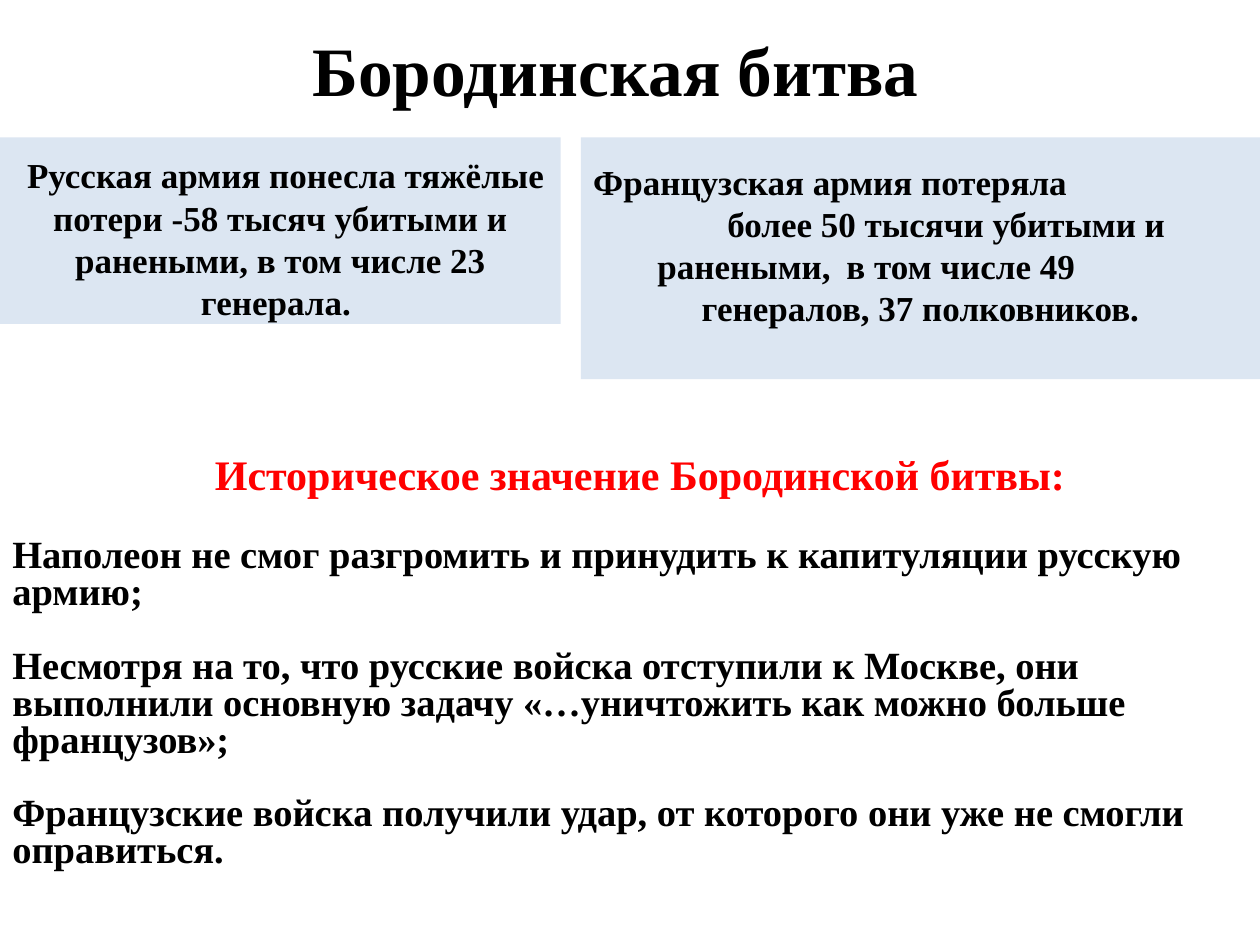
from lxml import etree
from pptx import Presentation
from pptx.dml.color import RGBColor
from pptx.enum.shapes import MSO_SHAPE
from pptx.enum.text import MSO_ANCHOR, PP_ALIGN
from pptx.oxml.ns import qn
from pptx.util import Inches, Pt

LEFT, CENTER = PP_ALIGN.LEFT, PP_ALIGN.CENTER
TOP, MIDDLE = MSO_ANCHOR.TOP, MSO_ANCHOR.MIDDLE
RECTANGLE = MSO_SHAPE.RECTANGLE
FONT = "Times New Roman"
BLACK, RED, PANEL_BLUE = "000000", "FF0000", "DCE6F2"

# Each paragraph: runs of (text, size), then its format.
TITLE = [([("Бородинская битва", 39.6)], {})]
RUSSIAN_LOSSES = [
    ([(" ", 24), ("Русская армия понесла тяжёлые потери -58 тысяч убитыми и "
                  "ранеными, в том числе 23 генерала. ", 20)], {}),
]
FRENCH_LOSSES = [
    ([("Французская армия потеряла", 20)], {"alignment": LEFT}),
    ([("более 50 тысячи убитыми и", 20)], {"indent": 0.41}),
    ([("ранеными,\tв том числе 49", 20)],
     {"alignment": LEFT, "indent": 0.51, "tab": 2.86}),
    ([("генералов, 37 полковников.", 20)], {}),
]
HEADING = "Историческое значение Бородинской битвы:"
CONCLUSIONS = [
    "Наполеон не смог разгромить и принудить к капитуляции русскую армию;",
    "Несмотря на то, что русские войска отступили к Москве, они выполнили "
    "основную задачу «…уничтожить как можно больше французов»;",
    "Французские войска получили удар, от которого они уже не смогли оправиться.",
]
SIGNIFICANCE = [([(HEADING, 24)], {"color": RED, "line_spacing": 0.8})] + [
    ([(text, 22)], {"alignment": LEFT, "line_spacing": 0.8,
                    "space_before": Pt(21 if number else 23)})
    for number, text in enumerate(CONCLUSIONS)
]

# Each block: left, top, width, height; fill; anchor; top margin; paragraphs.
BLOCKS = [
    ((2.19, 0, 5.39, 1.09), None, MIDDLE, 0.05, TITLE),
    ((0, 1.09, 4.45, 1.48), PANEL_BLUE, TOP, 0.07, RUSSIAN_LOSSES),
    ((4.61, 1.09, 5.39, 1.92), PANEL_BLUE, TOP, 0.18, FRENCH_LOSSES),
    ((0, 3.59, 10.16, 3.41), None, TOP, 0.05, SIGNIFICANCE),
]


def rgb(value):
    return RGBColor.from_string(value)


def set_indent(paragraph, indent, tab):
    """Set the left margin and an optional tab stop, in inches."""
    properties = paragraph._p.get_or_add_pPr()
    properties.set("marL", str(Inches(indent)))
    properties.set("indent", "0")
    if tab:
        tabs = etree.SubElement(properties, qn("a:tabLst"))
        etree.SubElement(tabs, qn("a:tab"), pos=str(Inches(tab)), algn="l")


def fill_paragraph(paragraph, runs, paragraph_format):
    settings = {"alignment": CENTER, **paragraph_format}
    color = settings.pop("color", BLACK)
    indent, tab = settings.pop("indent", 0), settings.pop("tab", None)
    for name, value in settings.items():
        setattr(paragraph, name, value)
    set_indent(paragraph, indent, tab)
    for text, size in runs:
        run = paragraph.add_run()
        run.text = text
        for name, value in {"name": FONT, "size": Pt(size), "bold": True}.items():
            setattr(run.font, name, value)
        run.font.color.rgb = rgb(color)


def add_block(slide, box, fill, anchor, margin_top, paragraphs):
    position = [Inches(length) for length in box]
    if fill:
        shape = slide.shapes.add_shape(RECTANGLE, *position)
        shape.shadow.inherit = False
        shape.fill.solid()
        shape.fill.fore_color.rgb = rgb(fill)
        shape.line.fill.background()
    else:
        shape = slide.shapes.add_textbox(*position)
    frame = shape.text_frame
    frame_format = {"word_wrap": True, "vertical_anchor": anchor,
                    "margin_top": Inches(margin_top)}
    for name, value in frame_format.items():
        setattr(frame, name, value)
    for number, (runs, paragraph_format) in enumerate(paragraphs):
        paragraph = frame.add_paragraph() if number else frame.paragraphs[0]
        fill_paragraph(paragraph, runs, paragraph_format)


def main():
    presentation = Presentation()
    presentation.slide_width, presentation.slide_height = Inches(10), Inches(7.5)
    slide = presentation.slides.add_slide(presentation.slide_layouts[6])
    for block in BLOCKS:
        add_block(slide, *block)
    presentation.save("out.pptx")


if __name__ == "__main__":
    main()
